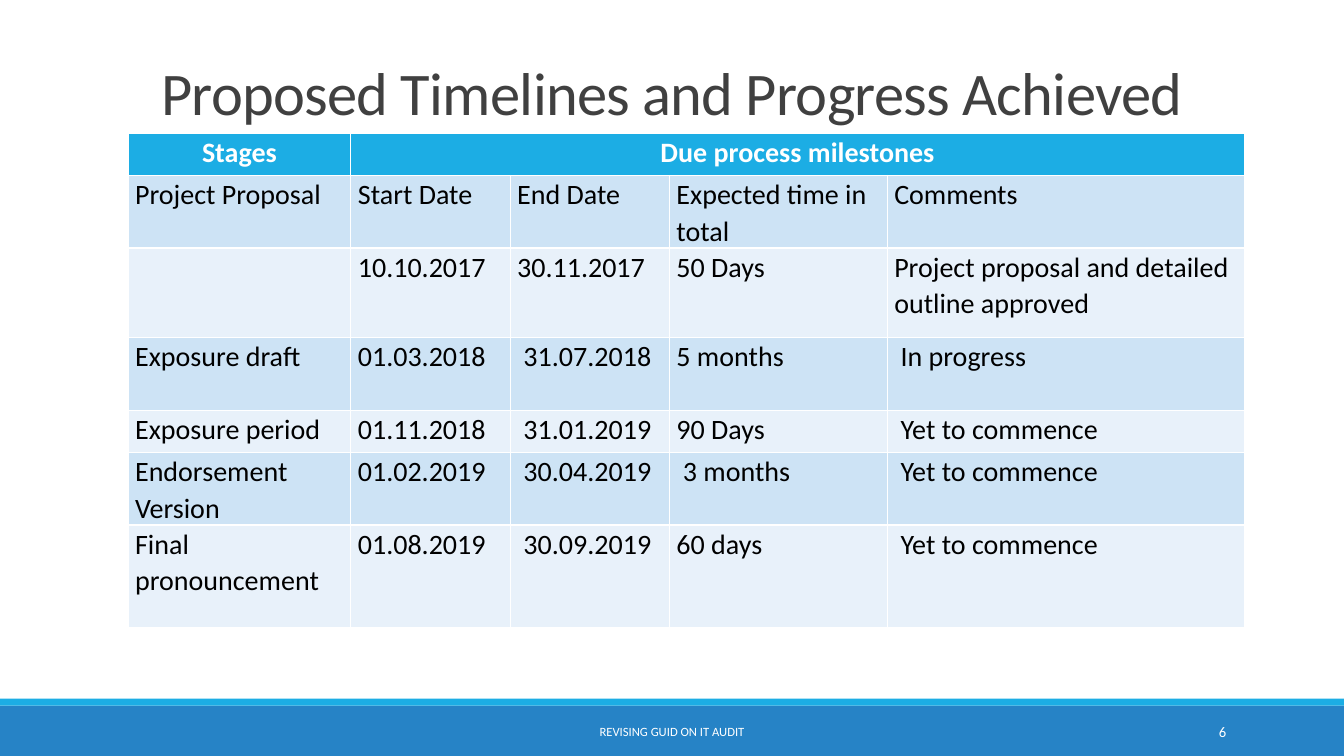
"""Build the slide of proposed timelines and progress achieved."""
from pptx import Presentation, util as u
from pptx.dml.color import RGBColor
from pptx.enum import shapes, text

WIDTH, HEIGHT = u.Inches(13.33), u.Inches(7.5)
WHITE = RGBColor(0xFF, 0xFF, 0xFF)
BLACK = RGBColor(0x00, 0x00, 0x00)
GREY = RGBColor(0x40, 0x40, 0x40)
CYAN = RGBColor(0x1C, 0xAD, 0xE4)
BLUE = RGBColor(0x26, 0x83, 0xC6)
BANDS = RGBColor(0xE8, 0xF1, 0xFA), RGBColor(0xCD, 0xE3, 0xF5)
LEFT, CENTER, RIGHT = text.PP_ALIGN.LEFT, text.PP_ALIGN.CENTER, text.PP_ALIGN.RIGHT
COLUMNS = 2.21, 1.58, 1.58, 2.16, 3.54
ROWS = 0.42, 0.72, 0.89, 0.72, 0.42, 0.72, 1.02
MILESTONES = (
    ("Stages", "Due process milestones"),
    ("Project Proposal", "Start Date", "End Date", "Expected time in total", "Comments"),
    ("", "10.10.2017", "30.11.2017", "50 Days",
     "Project proposal and detailed outline approved"),
    ("Exposure draft", "01.03.2018", " 31.07.2018", "5 months", " In progress"),
    ("Exposure period", "01.11.2018", " 31.01.2019", "90 Days", " Yet to commence"),
    ("Endorsement Version", "01.02.2019", " 30.04.2019", " 3 months", " Yet to commence"),
    ("Final pronouncement", "01.08.2019", " 30.09.2019", "60 days", " Yet to commence"),
)


def write(tf, words, size, color, align=LEFT, spacing=1.0, bold=False):
    """Fill a text frame with one paragraph and return its run."""
    p = tf.paragraphs[0]
    p.alignment, p.line_spacing = align, spacing
    p.font.name, p.font.size = "Calibri", u.Pt(size)
    p.font.color.rgb, p.font.bold = color, bold
    r = p.add_run()
    r.text = words
    return r


def add_label(s, box, words, size, color, align, anchor, spacing=1.0):
    """Add a wrapped text box, its box given in inches, and return its run."""
    tf = s.shapes.add_textbox(*map(u.Inches, box)).text_frame
    tf.word_wrap, tf.vertical_anchor = True, anchor
    return write(tf, words, size, color, align, spacing)


def add_band(s, top, height, color):
    """Add a full-width band, top and height given as shares of the slide."""
    sp = s.shapes.add_shape(shapes.MSO_SHAPE.RECTANGLE, 0, int(HEIGHT * top),
                            WIDTH, int(HEIGHT * height))
    sp.shadow.inherit = False
    sp.fill.solid()
    sp.fill.fore_color.rgb = color
    sp.line.fill.background()


def add_milestones(s, left, top):
    """Add the banded table of stages, dates and comments."""
    table = s.shapes.add_table(
        len(ROWS), len(COLUMNS), u.Inches(left), u.Inches(top),
        u.Inches(sum(COLUMNS)), u.Inches(sum(ROWS))).table
    for column, width in zip(table.columns, COLUMNS):
        column.width = u.Inches(width)
    for row, height in zip(table.rows, ROWS):
        row.height = u.Inches(height)
    table.cell(0, 1).merge(table.cell(0, len(COLUMNS) - 1))
    for i, entries in enumerate(MILESTONES):
        header = i == 0
        for j, words in enumerate(entries):
            cell = table.cell(i, j)
            cell.margin_left = cell.margin_right = u.Inches(0.07)
            cell.margin_top = cell.margin_bottom = 0
            cell.fill.solid()
            cell.fill.fore_color.rgb = CYAN if header else BANDS[i % 2]
            write(cell.text_frame, words, 20, WHITE if header else BLACK,
                  CENTER if header else LEFT, 1.07, header)


def main():
    """Build and save the slide."""
    prs = Presentation()
    prs.slide_width, prs.slide_height = WIDTH, HEIGHT
    s = prs.slides.add_slide(prs.slide_layouts[6])
    add_band(s, 14 / 15, 1 / 15, BLUE)
    add_band(s, 0.924, 0.0093, CYAN)
    title = add_label(s, (1.5, 0.32, 10.5, 1), "Proposed Timelines and Progress Achieved",
                      43.2, GREY, LEFT, text.MSO_ANCHOR.BOTTOM, 0.85)
    title.font._element.set("spc", "-50")
    add_milestones(s, 1.27, 1.32)
    middle = text.MSO_ANCHOR.MIDDLE
    add_label(s, (4.03, 7.06, 5.27, 0.4), "REVISING GUID ON IT AUDIT", 9, WHITE, CENTER, middle)
    add_label(s, (10.83, 7.06, 1.43, 0.4), "6", 10.5, WHITE, RIGHT, middle)
    prs.save("out.pptx")


if __name__ == "__main__":
    main()
